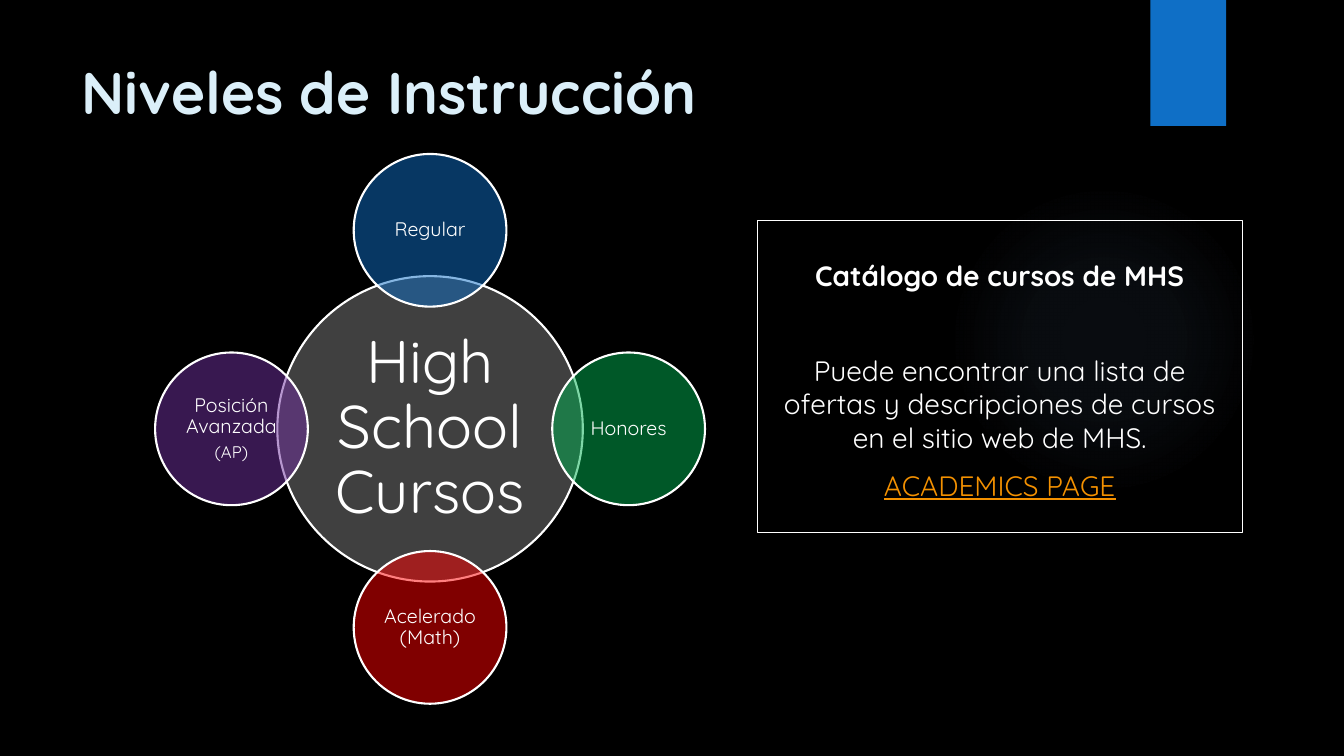
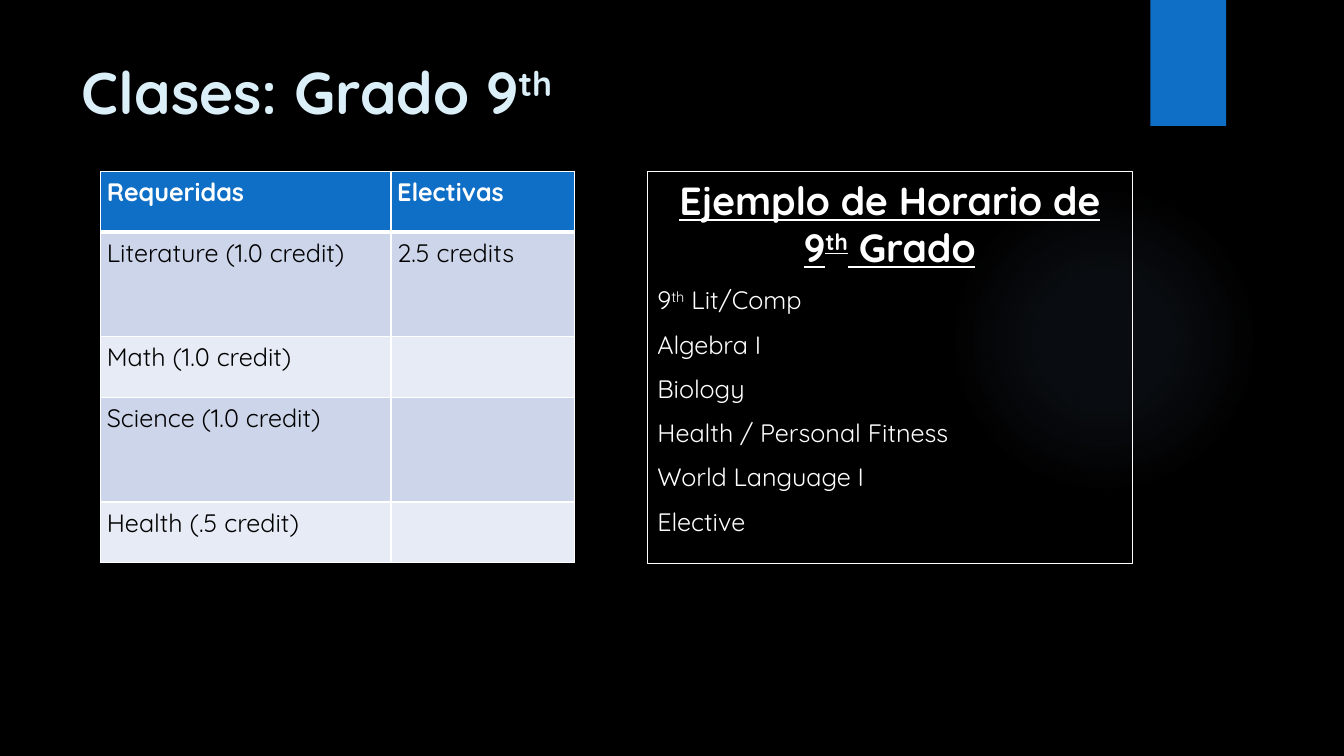
import math
import pptx
import pptx.dml.color
import pptx.enum.shapes
import pptx.enum.text
import pptx.oxml
import pptx.oxml.ns
import pptx.util

Rgb = pptx.dml.color.RGBColor
Pt = pptx.util.Pt
Kind = pptx.enum.shapes.MSO_SHAPE
Align = pptx.enum.text.PP_ALIGN
Anchor = pptx.enum.text.MSO_ANCHOR
qn = pptx.oxml.ns.qn

BLACK = Rgb(0x00, 0x00, 0x00)
WHITE = Rgb(0xFF, 0xFF, 0xFF)
ICE = Rgb(0xDB, 0xEF, 0xF9)
BLUE = Rgb(0x0F, 0x6F, 0xC6)
GLOW = Rgb(0x82, 0xB1, 0xE5)
GRAY = Rgb(0x80, 0x80, 0x80)
GREEN = Rgb(0x00, 0xB0, 0x50)
RED = Rgb(0xFF, 0x00, 0x00)
PURPLE = Rgb(0x70, 0x30, 0xA0)
ORANGE = Rgb(0xF4, 0x91, 0x00)
DARK_ROW = Rgb(0xCC, 0xD5, 0xEA)
LIGHT_ROW = Rgb(0xE7, 0xEB, 0xF5)
FONT = "Quicksand"

# The slide is a grid of 100 columns by 100 rows
WIDTH, HEIGHT = pptx.util.Inches(13.33), pptx.util.Inches(7.5)
COL, ROW = WIDTH / 100, HEIGHT / 100


def area(left, top, wide, high):
    return [round(n) for n in (left * COL, top * ROW, wide * COL, high * ROW)]


def move(shape, box):
    shape.left, shape.top, shape.width, shape.height = box


# Text: a part between ^ marks is raised
def write(para, text, size, color=WHITE, bold=False, line=False,
          align=Align.LEFT, before=0, spacing=1.0):
    props = para._p.get_or_add_pPr()
    props.set("marL", "0")
    props.set("indent", "0")
    props.append(pptx.oxml.parse_xml(f"<a:buNone {pptx.oxml.ns.nsdecls('a')}/>"))
    para.alignment = align
    para.space_before, para.space_after = Pt(before), Pt(0)
    para.line_spacing = spacing
    font = para.font
    font.name, font.size = FONT, Pt(size)
    font.bold, font.underline = bold, line
    font.color.rgb = color
    for index, part in enumerate(text.split("^")):
        if part:
            run = para.add_run()
            run.text = part
            if index % 2:
                run._r.get_or_add_rPr().set("baseline", "30000")


def fill_frame(frame, items, **shared):
    frame.word_wrap = True
    frame.auto_size = pptx.enum.text.MSO_AUTO_SIZE.NONE
    for index, (text, style) in enumerate(items):
        para = frame.add_paragraph() if index else frame.paragraphs[0]
        write(para, text, **{**shared, **style})


# Shapes
def draw(slide, kind, box, color, edge=None, opaque=100):
    shape = slide.shapes.add_shape(kind, *box)
    shape.shadow.inherit = False
    shape.fill.solid()
    shape.fill.fore_color.rgb = color
    if opaque < 100:
        tone = shape.element.spPr.find(".//" + qn("a:srgbClr"))
        tone.append(pptx.oxml.parse_xml(
            f'<a:alpha {pptx.oxml.ns.nsdecls("a")} val="{opaque * 1000}"/>'))
    if edge:
        shape.line.color.rgb, shape.line.width = WHITE, Pt(edge)
    else:
        shape.line.fill.background()
    return shape


def add_glow(slide):
    shape = draw(slide, Kind.OVAL, area(70.6, 24.4, 23.1, 41.07), GLOW)
    stops = "".join(
        f'<a:gs pos="{spot * 1000}"><a:srgbClr val="{GLOW}">'
        f'<a:alpha val="{alpha * 1000}"/></a:srgbClr></a:gs>'
        for spot, alpha in ((0, 7), (36, 6), (69, 0)))
    blend = pptx.oxml.parse_xml(
        f'<a:gradFill {pptx.oxml.ns.nsdecls("a")}><a:gsLst>{stops}</a:gsLst>'
        '<a:path path="circle"><a:fillToRect l="50000" t="50000" r="50000" '
        'b="50000"/></a:path></a:gradFill>')
    props = shape.element.spPr
    props.replace(props.find(qn("a:solidFill")), blend)
    return shape


# Shared slide: glow and band behind, then title
def add_slide(deck, text):
    slide = deck.slides.add_slide(deck.slide_layouts[1])
    title = slide.shapes.title
    band = draw(slide, Kind.RECTANGLE, area(85.6, 0, 5.63, 16.67), BLUE)
    for shape in (add_glow(slide), band):
        title.element.addprevious(shape.element)
    move(title, area(5.33, 6.67, 77.2, 12.4))
    title.text_frame.vertical_anchor = Anchor.TOP
    fill_frame(title.text_frame, [(text, {})], size=42, color=ICE, bold=True)
    return slide


def fill_body(slide, box, items, top=0.05, **shared):
    body = slide.placeholders[1]
    move(body, box)
    body.line.color.rgb, body.line.width = WHITE, Pt(0.75)
    frame = body.text_frame
    frame.vertical_anchor = Anchor.TOP
    frame.margin_top = pptx.util.Inches(top)
    fill_frame(frame, items, **shared)


# Circles: a hub with four half-size discs around it
def add_disc(slide, mid_x, mid_y, size, color, items, inset, font_size):
    box = [round(n) for n in (mid_x - size / 2, mid_y - size / 2, size, size)]
    frame = draw(slide, Kind.OVAL, box, color, 1.5, 50).text_frame
    frame.vertical_anchor = Anchor.MIDDLE
    frame.margin_left = frame.margin_right = pptx.util.Inches(inset)
    frame.margin_top = frame.margin_bottom = pptx.util.Inches(inset)
    fill_frame(frame, items, size=font_size, align=Align.CENTER, spacing=0.9)


def add_wheel(slide, hub, discs):
    mid_x, mid_y, size = 32 * COL, 56.73 * ROW, 40.4 * ROW
    add_disc(slide, mid_x, mid_y, size, GRAY, hub, 0.06, 43)
    reach = 0.65 * size
    for index, (color, items) in enumerate(discs):
        angle = math.tau * index / len(discs)
        add_disc(slide, mid_x + reach * math.sin(angle),
                 mid_y - reach * math.cos(angle), size / 2, color, items, 0.02, 14)


# Table
def edge_cell(cell, below):
    props = cell._tc.get_or_add_tcPr()
    edges = (("lnL", 1), ("lnR", 1), ("lnT", 1), ("lnB", below))
    for index, (side, width) in enumerate(edges):
        props.insert(index, pptx.oxml.parse_xml(
            f'<a:{side} {pptx.oxml.ns.nsdecls("a")} w="{Pt(width)}"><a:solidFill>'
            f'<a:srgbClr val="{WHITE}"/></a:solidFill></a:{side}>'))


def add_grid(slide, left, top, wides, highs, rows):
    box = area(left, top, sum(wides), sum(highs))
    table = slide.shapes.add_table(len(rows), len(wides), *box).table
    for column, wide in zip(table.columns, wides):
        column.width = round(wide * COL)
    for r, (row, high, texts) in enumerate(zip(table.rows, highs, rows)):
        row.height = round(high * ROW)
        for cell, text in zip(row.cells, texts):
            cell.fill.solid()
            shade = DARK_ROW if r % 2 else LIGHT_ROW
            cell.fill.fore_color.rgb = shade if r else BLUE
            cell.margin_left = cell.margin_right = pptx.util.Inches(0.06)
            edge_cell(cell, 1 if r else 3)
            write(cell.text_frame.paragraphs[0], text, 18,
                  BLACK if r else WHITE, bold=not r)


def add_levels(deck):
    slide = add_slide(deck, "Niveles de Instrucción")
    add_wheel(slide, [("High School Cursos", {})], [
        (BLUE, [("Regular", {})]),
        (GREEN, [("Honores", {})]),
        (RED, [("Acelerado (Math)", {})]),
        (PURPLE, [("Posición Avanzada", {}), ("(AP)", {"size": 12, "before": 5})]),
    ])
    fill_body(slide, area(56.34, 29.2, 36.09, 41.2), [
        ("Catálogo de cursos de MHS", {"bold": True}),
        ("Puede encontrar una lista de ofertas y descripciones de cursos "
         "en el sitio web de MHS.", {"before": 44}),
        ("ACADEMICS PAGE", {"color": ORANGE, "line": True, "before": 10}),
    ], top=0.37, size=20, align=Align.CENTER)


def add_classes(deck):
    slide = add_slide(deck, "Clases: Grado 9^th^")
    add_grid(slide, 7.5, 22.67, (21.6, 13.67), (8, 13.87, 8, 13.87, 8), [
        ("Requeridas", "Electivas"),
        ("Literature (1.0 credit)", "2.5 credits"),
        ("Math (1.0 credit)", ""),
        ("Science (1.0 credit)", ""),
        ("Health (.5 credit)", ""),
    ])
    head = {"size": 28, "bold": True, "line": True,
            "align": Align.CENTER, "before": 0}
    names = ("9^th^ Lit/Comp", "Algebra I", "Biology",
             "Health / Personal Fitness", "World Language I", "Elective")
    fill_body(slide, area(48.16, 22.67, 36.09, 51.87),
              [("Ejemplo de Horario de 9^th^ Grado", head)]
              + [(name, {}) for name in names], size=18, before=10)


def main():
    deck = pptx.Presentation()
    deck.slide_width, deck.slide_height = WIDTH, HEIGHT
    ground = deck.slide_master.background.fill
    ground.solid()
    ground.fore_color.rgb = BLACK
    add_levels(deck)
    add_classes(deck)
    deck.save("out.pptx")


if __name__ == "__main__":
    main()
